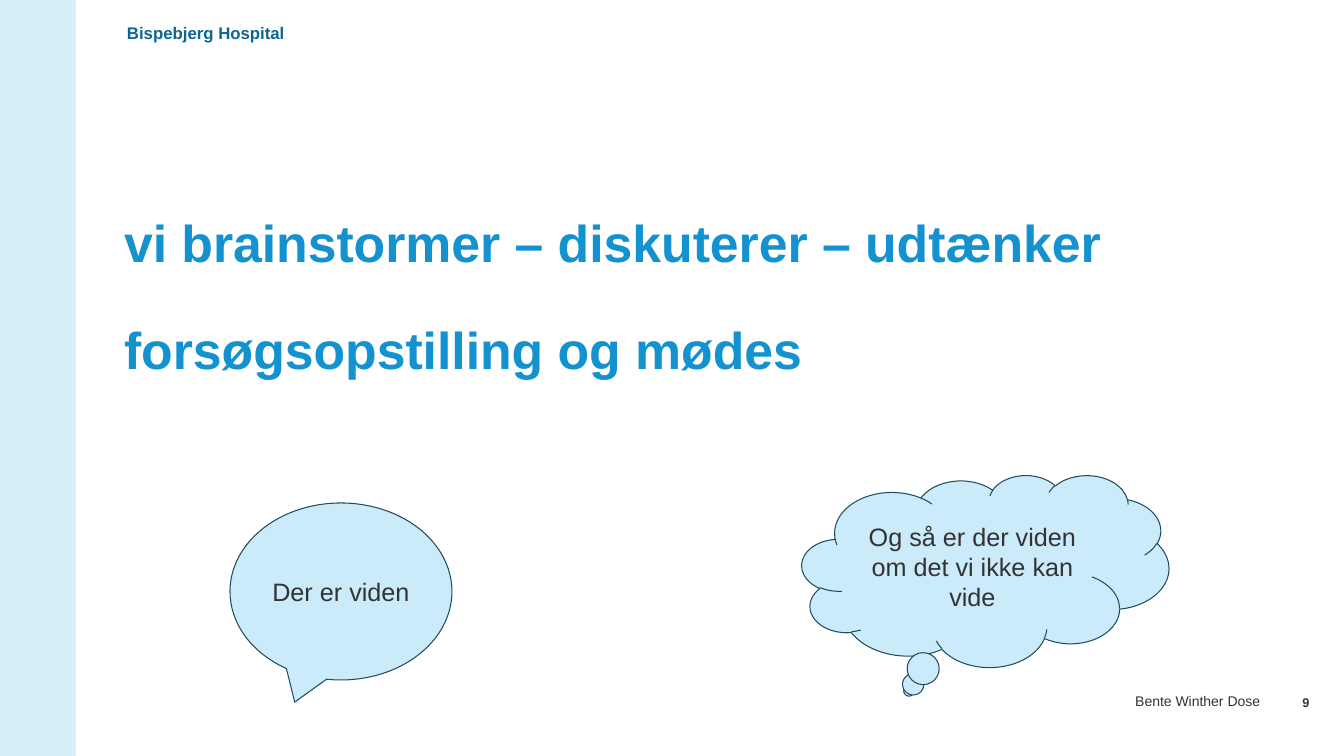
"""Build the slide on brainstorming with a speech bubble and a thought cloud."""
from pptx import Presentation
from pptx import util as u
from pptx.dml import color
from pptx.enum import shapes, text

PX = 914400 / 100.8
SLIDE = (1344, 756)
COLORS = {"band": "D6EFFB", "header": "0D6591", "title": "1492CF",
          "text": "333333", "bubble": "CCEBFA", "outline": "1F4A60"}
BAND = (0, 0, 76, 756)
TITLE = ["vi brainstormer – diskuterer – udtænker",
         "forsøgsopstilling og mødes"]
TITLE_BOX = (124, 220, 1143, 409)
ALIGN = text.PP_ALIGN
LABELS = [
    ("Bispebjerg Hospital", (127, 23, 674, 24), 12, "header", True, ALIGN.LEFT),
    ("Bente Winther Dose", (887, 693, 373, 20), 10, "text", False, ALIGN.RIGHT),
    ("9", (1268, 695, 76, 20), 9, "text", True, ALIGN.CENTER),
]
BUBBLES = [
    ("Der er viden", (230, 503, 222, 177), shapes.MSO_SHAPE.OVAL_CALLOUT),
    ("Og så er der viden om det vi ikke kan vide", (802, 475, 367, 192),
     shapes.MSO_SHAPE.CLOUD_CALLOUT),
]


def px(box):
    return [u.Emu(round(value * PX)) for value in box]


def rgb(name):
    return color.RGBColor.from_string(COLORS[name])


def write(shape, lines, size, color_name, bold, align, anchor):
    frame = shape.text_frame
    frame.text = "\n".join(lines)
    frame.word_wrap = True
    frame.auto_size = text.MSO_AUTO_SIZE.NONE
    frame.vertical_anchor = anchor
    frame.margin_left = frame.margin_top = frame.margin_right = frame.margin_bottom = 0
    for paragraph in frame.paragraphs:
        paragraph.alignment = align
        for run in paragraph.runs:
            run.font.name = "Arial"
            run.font.size = u.Pt(size)
            run.font.bold = bold
            run.font.color.rgb = rgb(color_name)


def add_filled(slide, preset, box, fill, outline=None):
    shape = slide.shapes.add_shape(preset, *px(box))
    shape.shadow.inherit = False
    shape.fill.solid()
    shape.fill.fore_color.rgb = rgb(fill)
    if outline:
        shape.line.color.rgb = rgb(outline)
        shape.line.width = u.Pt(0.75)
    else:
        shape.line.fill.background()
    return shape


def main():
    presentation = Presentation()
    presentation.slide_width, presentation.slide_height = px(SLIDE)
    slide = presentation.slides.add_slide(presentation.slide_layouts[5])
    top, middle = text.MSO_ANCHOR.TOP, text.MSO_ANCHOR.MIDDLE

    add_filled(slide, shapes.MSO_SHAPE.RECTANGLE, BAND, "band")

    title = slide.shapes.title
    title.left, title.top, title.width, title.height = px(TITLE_BOX)
    write(title, TITLE, 37, "title", True, ALIGN.LEFT, top)
    for index, paragraph in enumerate(title.text_frame.paragraphs):
        paragraph.line_spacing = 0.85
        paragraph.space_before = u.Pt(39 if index else 0)

    for label, box, size, color_name, bold, align in LABELS:
        write(slide.shapes.add_textbox(*px(box)), [label], size, color_name, bold, align, top)

    for label, box, preset in BUBBLES:
        bubble = add_filled(slide, preset, box, "bubble", "outline")
        write(bubble, [label], 18, "text", False, ALIGN.CENTER, middle)

    presentation.save("out.pptx")


if __name__ == "__main__":
    main()
